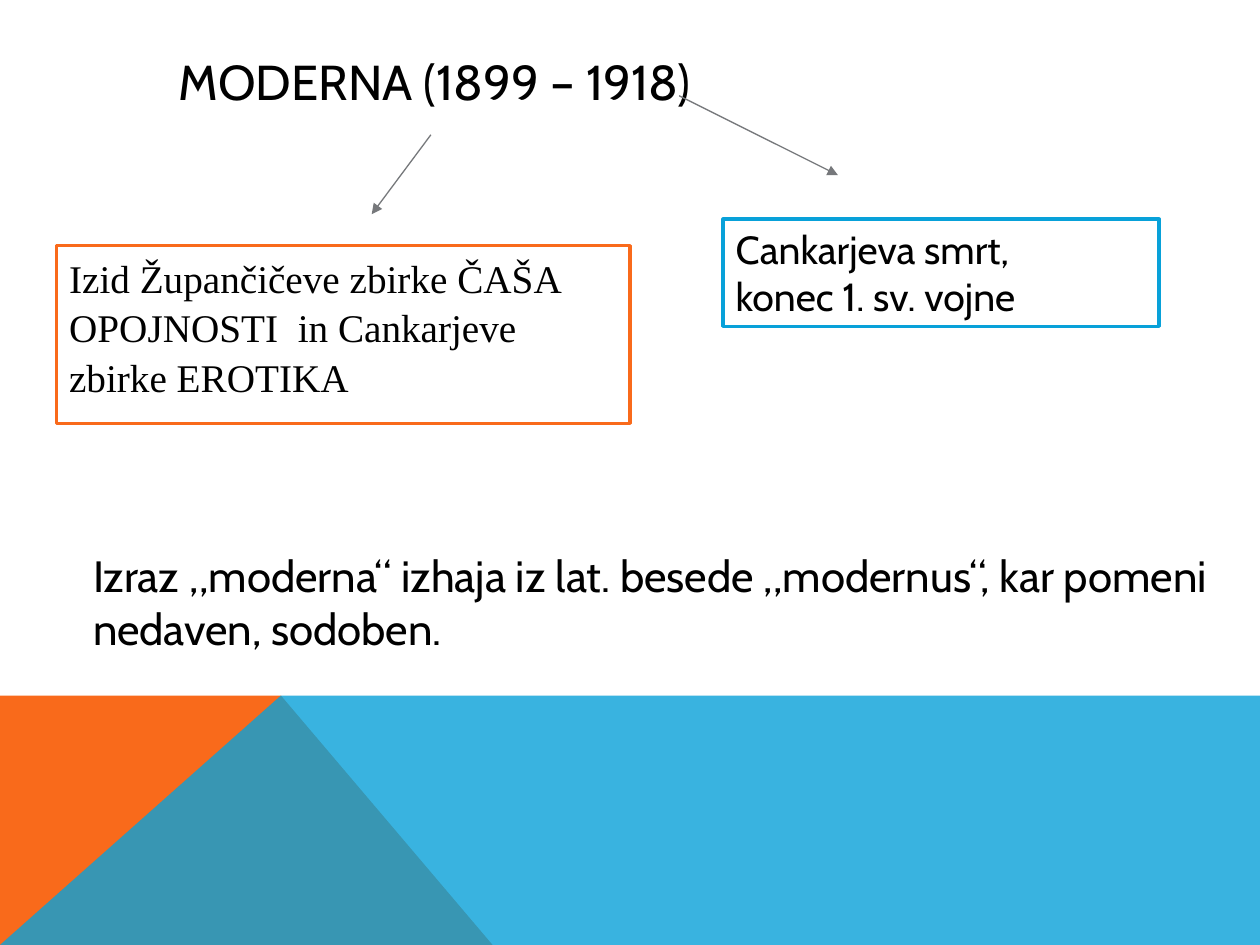
from lxml.etree import SubElement
from pptx import Presentation
from pptx.dml.color import RGBColor
from pptx.enum.shapes import MSO_CONNECTOR as Connector, MSO_SHAPE as Shape
from pptx.enum.text import MSO_ANCHOR as Anchor, PP_ALIGN as Align
from pptx.oxml.ns import qn
from pptx.util import Inches, Pt

ORANGE, BLUE, GREY = "F96A1B", "08A1D9", "76787B"
BLACK, WHITE = "000000", "FFFFFF"
SANS, SERIF = "Cabin", "Times New Roman"


def paint(color_format, color):
    color_format.rgb = RGBColor.from_string(color)


def fill_solid(shape, color):
    shape.fill.solid()
    paint(shape.fill.fore_color, color)


def write(frame, lines, size, font=SANS, anchor=Anchor.TOP, spacing=1.0):
    frame.word_wrap = True
    frame.vertical_anchor = anchor
    frame.text = "\n".join(lines)
    for paragraph in frame.paragraphs:
        paragraph.alignment = Align.LEFT
        paragraph.line_spacing = spacing
        paragraph.font.size = Pt(size)
        paragraph.font.name = font
        paint(paragraph.font.color, BLACK)


def add_band(slide, points, color, opacity=100):
    start, *rest = [(Inches(x), Inches(y)) for x, y in points]
    builder = slide.shapes.build_freeform(*start, scale=1.0)
    builder.add_line_segments(rest, close=True)
    band = builder.convert_to_shape()
    band.shadow.inherit = False
    fill_solid(band, color)
    band.line.fill.background()
    if opacity < 100:
        tint = band.fill._xPr.find(qn("a:solidFill"))[0]
        SubElement(tint, qn("a:alpha"), val=str(opacity * 1000))


def set_title(slide, heading):
    title = slide.shapes.title
    title.left, title.top = Inches(1.32), Inches(0.24)
    title.width, title.height = Inches(8.16), Inches(0.81)
    write(title.text_frame, [heading], 28, anchor=Anchor.MIDDLE)


def add_arrow(slide, start, end):
    ends = [Inches(value) for value in (*start, *end)]
    arrow = slide.shapes.add_connector(Connector.STRAIGHT, *ends)
    paint(arrow.line.color, GREY)
    arrow.line.width = Pt(0.75)
    SubElement(arrow.line._get_or_add_ln(), qn("a:tailEnd"), type="triangle")
    SubElement(arrow._element.spPr, qn("a:effectLst"))


def add_event(slide, bounds, lines, color, font=SANS, spacing=1.0):
    event = slide.shapes.add_shape(Shape.RECTANGLE, *map(Inches, bounds))
    event.shadow.inherit = False
    fill_solid(event, WHITE)
    paint(event.line.color, color)
    event.line.width = Pt(2)
    write(event.text_frame, lines, 22.4, font, spacing=spacing)


def add_explanation(slide, bounds, text):
    explanation = slide.shapes.add_textbox(*map(Inches, bounds))
    write(explanation.text_frame, [text], 25)


def main():
    deck = Presentation()
    deck.slide_width, deck.slide_height = Inches(10), Inches(7.5)
    slide = deck.slides.add_slide(deck.slide_layouts[5])

    peak = (2.23, 5.52)
    add_band(slide, [(0, 7.5), (0, 5.52), peak, (3.91, 7.5)], ORANGE)
    add_band(slide, [(0, 7.5), peak, (10, 5.52), (10, 7.5)], BLUE, opacity=80)

    set_title(slide, "MODERNA (1899 – 1918)")
    add_arrow(slide, (3.42, 1.07), (2.95, 1.7))
    add_arrow(slide, (5.39, 0.76), (6.65, 1.39))
    add_event(slide, (0.45, 1.95, 4.55, 1.41),
              ["Izid Župančičeve zbirke ČAŠA OPOJNOSTI  in Cankarjeve zbirke EROTIKA"],
              ORANGE, SERIF, spacing=1.05)
    add_event(slide, (5.74, 1.74, 3.46, 0.85),
              ["Cankarjeva smrt,", "konec 1. sv. vojne"], BLUE)
    add_explanation(slide, (0.64, 4.31, 9.36, 0.93),
                    "Izraz „moderna“ izhaja iz lat. besede „modernus“, "
                    "kar pomeni nedaven, sodoben.")
    deck.save("out.pptx")


if __name__ == "__main__":
    main()
